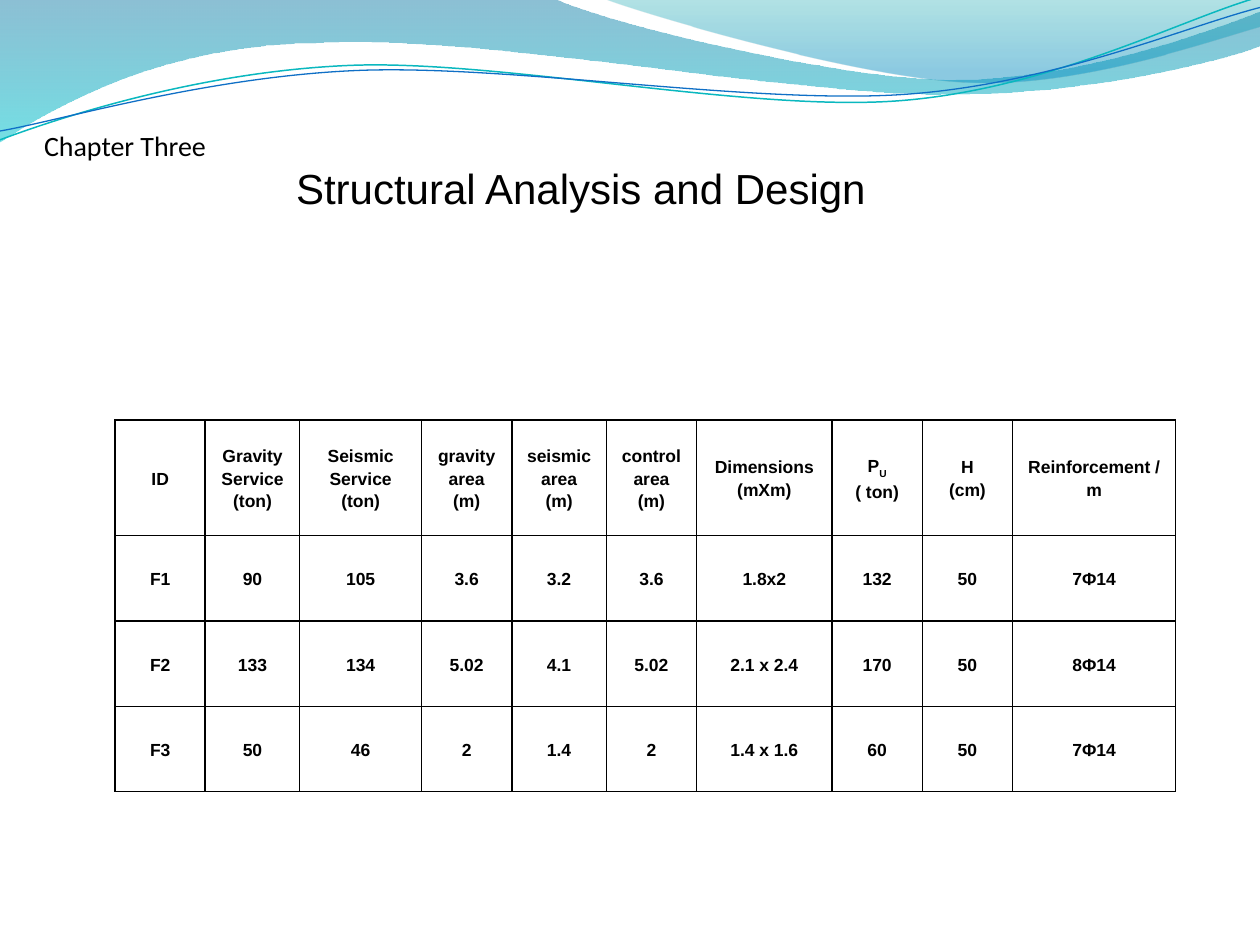
from math import cos, radians, sin

from lxml.etree import SubElement
from pptx import Presentation
from pptx.dml.color import RGBColor
from pptx.enum.text import MSO_ANCHOR as Anchor, MSO_AUTO_SIZE as AutoSize, PP_ALIGN as Align
from pptx.oxml.ns import qn
from pptx.util import Pt

# Wave outlines in points: two numbers are a corner, six are a Bezier curve
BACK_WAVE = [(0, -0.7), (316.8, -0.7),
             (342.7, 12.2, 478.1, 45.4, 545.8, 45.4),
             (614.2, 45.4, 689.8, 18.7, 720, 6.5), (720.7, 25.9),
             (707.8, 31.7, 626.4, 54.7, 537.1, 54),
             (447.8, 54, 275, 20.2, 185, 24.5),
             (92.9, 25.2, 33.1, 59.8, -0.7, 81.4)]
FRONT_WAVE = [(344.9, -0.7), (366.5, 7.9, 491, 44.6, 553.7, 46.8),
              (616.3, 49.7, 691.9, 23, 720, 15.1), (720, 0)]
TEAL_LINE = [(0, 79.9), (34.6, 67, 113.8, 41, 199.4, 37.4),
             (284.4, 33.8, 427, 64.1, 513.4, 57.6),
             (599.8, 51.1, 675.4, 10.8, 718.6, -1.4)]
BLUE_LINE = [(0, 74.9), (33.8, 69.1, 118.1, 43.9, 203.8, 40.3),
             (290.2, 36.7, 429.8, 59.8, 516.2, 54),
             (601.9, 48.2, 677.5, 15.1, 720, 4.3)]
TILT = -2.7  # degrees, for the two lines

# Table content: "\n" starts a paragraph, "_" starts a subscript
ROWS = [
    ["ID", "Gravity Service\n(ton)", "Seismic Service\n(ton)", "gravity area\n(m)",
     "seismic area\n(m)", "control area\n(m)", "Dimensions\n(mXm)", "P_U\n( ton)",
     "H\n(cm)", "Reinforcement /m"],
    ["F1", "90", "105", "3.6", "3.2", "3.6", "1.8x2", "132", "50", "7Φ14"],
    ["F2", "133", "134", "5.02", "4.1", "5.02", "2.1 x 2.4", "170", "50", "8Φ14"],
    ["F3", "50", "46", "2", "1.4", "2", "1.4 x 1.6", "60", "50", "7Φ14"],
]
COL_WIDTHS = [51.5, 54, 69.6, 51.6, 54, 51.6, 77.4, 51.6, 51.6, 93.2]
ROW_HEIGHTS = [66, 48.8, 48.8, 48.8]


def rgb(color):
    return RGBColor.from_string(color)


def add_text(p, text, font="Arial", size=10, bold=False, color="000000", base=0):
    r = p.add_run()
    r.text = text
    r.font.name, r.font.size, r.font.bold = font, Pt(size), bold
    r.font.color.rgb = rgb(color)
    if base:
        r.font._element.set("baseline", str(base * 1000))


def rotate(point, center, degrees):
    a = radians(degrees)
    dx, dy = point[0] - center[0], point[1] - center[1]
    return (center[0] + dx * cos(a) - dy * sin(a),
            center[1] + dx * sin(a) + dy * cos(a))


def add_outline(shapes, path, close, center=(0, 0), tilt=0):
    """Draw a path; a tilted one is levelled about center, then rotated."""
    points = [rotate(seg[i:i + 2], center, -tilt)
              for seg in path for i in range(0, len(seg), 2)]
    start, *rest = [(Pt(x), Pt(y)) for x, y in points]
    builder = shapes.build_freeform(*start)
    builder.add_line_segments(rest, close=close)
    sp = builder.convert_to_shape()
    sp.shadow.inherit = False
    sp.rotation = tilt % 360

    # Gather each three control points into one curve
    lines = iter(list(sp.element.spPr.iter(qn("a:lnTo"))))
    for seg in path[1:]:
        first = next(lines)
        if len(seg) == 6:
            curve = first.makeelement(qn("a:cubicBezTo"), {})
            first.addprevious(curve)
            for line in (first, next(lines), next(lines)):
                curve.append(line[0])
                line.getparent().remove(line)
    return sp


def add_wave(shapes, path, stops):
    """Filled wave; stops are (position, colour, opacity in percent)."""
    sp = add_outline(shapes, path, True)
    sp.line.fill.background()
    sp.fill.gradient()
    sp.fill.gradient_angle = 270  # top to bottom
    for stop, (pos, color, _) in zip(sp.fill.gradient_stops, stops):
        stop.position = pos
        stop.color.rgb = rgb(color)
    colors = sp.element.spPr.iter(qn("a:srgbClr"))
    for clr, (_, _, opacity) in zip(list(colors), stops):
        SubElement(clr, qn("a:alpha"), val=str(opacity * 1000))


def add_wave_line(shapes, path, center, color, width):
    sp = add_outline(shapes, path, False, center, TILT)
    sp.fill.background()
    sp.line.color.rgb = rgb(color)
    sp.line.width = Pt(width)


def set_title(slide):
    sp = slide.shapes.title
    sp.left, sp.top, sp.width, sp.height = Pt(18), Pt(69.8), Pt(702), Pt(55.4)
    slide.shapes._spTree.append(sp.element)  # in front of the waves
    tf = sp.text_frame
    tf.word_wrap = True
    tf.auto_size = AutoSize.SHAPE_TO_FIT_TEXT
    tf.vertical_anchor = Anchor.MIDDLE
    chapter, heading = tf.paragraphs[0], tf.add_paragraph()
    chapter.alignment = heading.alignment = Align.LEFT
    tabs = SubElement(heading._p.get_or_add_pPr(), qn("a:tabLst"))
    for stop in (72, 144):
        SubElement(tabs, qn("a:tab"), pos=str(Pt(stop)), algn="l")
    add_text(chapter, "Chapter Three", font="Calibri", size=16)
    add_text(heading, "\t\tStructural Analysis and Design", size=24)


def set_borders(cell, color="000000", width=1):
    tcPr = cell._tc.get_or_add_tcPr()
    for i, side in enumerate(("a:lnL", "a:lnR", "a:lnT", "a:lnB")):
        ln = tcPr.makeelement(qn(side), {"w": str(Pt(width))})
        SubElement(SubElement(ln, qn("a:solidFill")), qn("a:srgbClr"), val=color)
        tcPr.insert(i, ln)


def fill_cell(cell, text):
    cell.fill.background()
    cell.vertical_anchor = Anchor.MIDDLE
    cell.margin_left = cell.margin_right = Pt(5.2)
    cell.margin_top = cell.margin_bottom = 0
    set_borders(cell)
    tf = cell.text_frame
    for i, line in enumerate(text.split("\n")):
        p = tf.add_paragraph() if i else tf.paragraphs[0]
        p.alignment = Align.CENTER
        p.line_spacing = 1.15
        main_text, _, subscript = line.partition("_")
        add_text(p, main_text, bold=True)
        if subscript:
            add_text(p, subscript, bold=True, base=-25)


def add_footing_table(slide):
    frame = slide.shapes.add_table(len(ROWS), len(COL_WIDTHS), Pt(65.8), Pt(240),
                                   Pt(sum(COL_WIDTHS)), Pt(sum(ROW_HEIGHTS)))
    table = frame.table
    table.first_row = table.horz_banding = False
    for col, width in zip(table.columns, COL_WIDTHS):
        col.width = Pt(width)
    for row, height, texts in zip(table.rows, ROW_HEIGHTS, ROWS):
        row.height = Pt(height)
        for cell, text in zip(row.cells, texts):
            fill_cell(cell, text)


def main():
    prs = Presentation()
    prs.slide_width, prs.slide_height = Pt(720), Pt(540)
    slide = prs.slides.add_slide(prs.slide_layouts[5])

    # Wave band along the top
    add_wave(slide.shapes, BACK_WAVE, [(0, "0074A1", 45), (1, "00C6CF", 55)])
    add_wave(slide.shapes, FRONT_WAVE, [(0, "00A1A9", 30), (0.8, "008BBF", 45)])
    lines = slide.shapes.add_group_shape().shapes
    add_wave_line(lines, TEAL_LINE, (359.3, 41.4), "0AB8BF", 0.85)
    add_wave_line(lines, BLUE_LINE, (359.6, 42.5), "0F6FC6", 0.75)

    # Chapter heading and footing schedule
    set_title(slide)
    add_footing_table(slide)
    prs.save("out.pptx")


if __name__ == "__main__":
    main()
